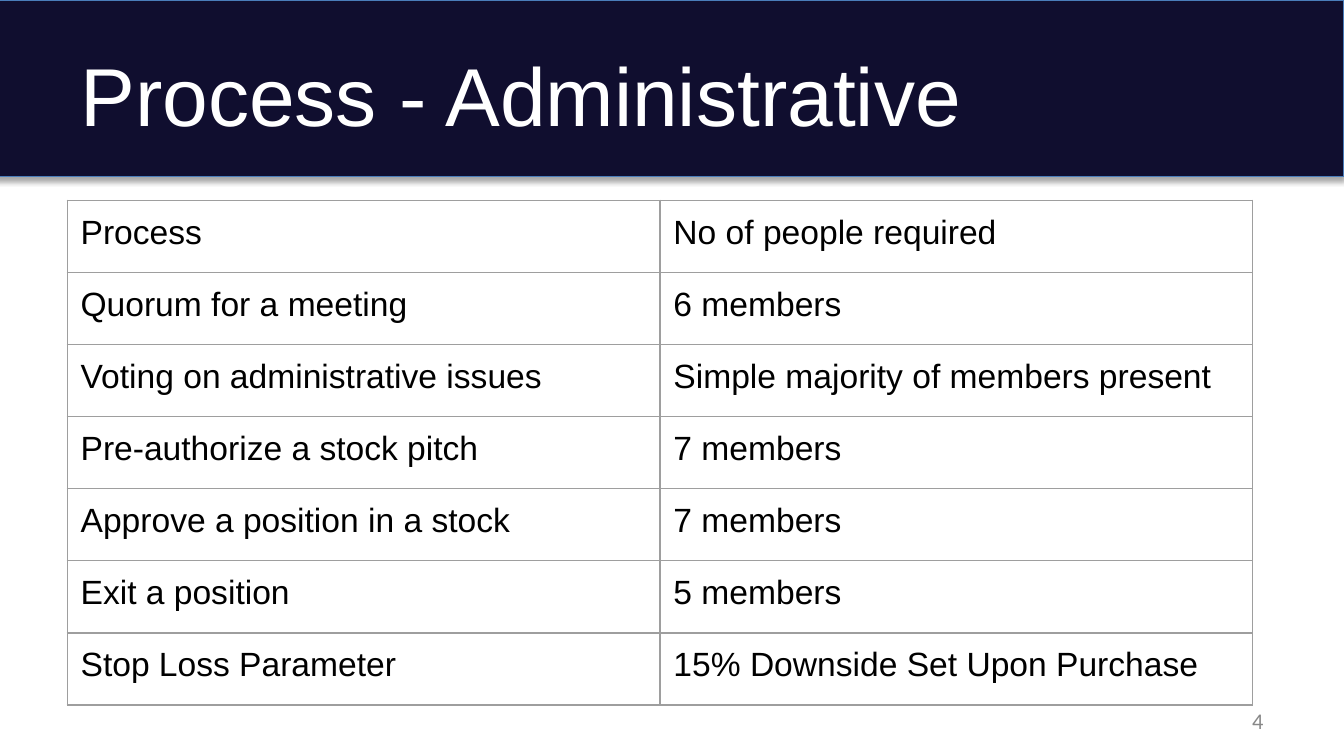
from lxml.etree import SubElement
from pptx import Presentation
from pptx.dml.color import RGBColor
from pptx.enum.shapes import MSO_SHAPE
from pptx.enum.text import MSO_ANCHOR, PP_ALIGN
from pptx.oxml.ns import qn
from pptx.util import Pt

NAVY, BLUE, WHITE, BLACK = "100E2F", "4A7DBA", "FFFFFF", "000000"
BORDER_GRAY, NUMBER_GRAY = "9E9E9E", "888888"

PROCESS_ROWS = [
    ("Process", "No of people required"),
    ("Quorum for a meeting", "6 members"),
    ("Voting on administrative issues", "Simple majority of members present"),
    ("Pre-authorize a stock pitch", "7 members"),
    ("Approve a position in a stock", "7 members"),
    ("Exit a position", "5 members"),
    ("Stop Loss Parameter", "15% Downside Set Upon Purchase"),
]
COLUMN_WIDTH, ROW_HEIGHT = 317.6, 38.65
CELL_MARGIN = 7.2


def color(hex_value):
    return RGBColor.from_string(hex_value)


def write_text(text_frame, text, size=18, font="Arial", fill=BLACK, align=PP_ALIGN.LEFT):
    paragraph = text_frame.paragraphs[0]
    paragraph.alignment = align
    run = paragraph.add_run()
    run.text = text
    run.font.size = Pt(size)
    run.font.name = font
    run.font.color.rgb = color(fill)


def add_text_box(slide, left, top, width, height, text, **text_format):
    box = slide.shapes.add_textbox(Pt(left), Pt(top), Pt(width), Pt(height))
    box.text_frame.word_wrap = True
    box.text_frame.vertical_anchor = MSO_ANCHOR.MIDDLE
    write_text(box.text_frame, text, **text_format)


def add_shadow(shape, blur, distance, opacity):
    shape.shadow.inherit = False
    effects = shape._element.spPr.find(qn("a:effectLst"))
    shadow = SubElement(effects, qn("a:outerShdw"), blurRad=str(Pt(blur)),
                        dist=str(Pt(distance)), dir="5400000", rotWithShape="0")
    shade = SubElement(shadow, qn("a:srgbClr"), val=BLACK)
    SubElement(shade, qn("a:alpha"), val=str(opacity * 1000))


def add_banner(slide):
    banner = slide.shapes.add_shape(MSO_SHAPE.RECTANGLE, Pt(-2.9), Pt(0), Pt(722.9), Pt(94.5))
    banner.fill.solid()
    banner.fill.fore_color.rgb = color(NAVY)
    banner.line.color.rgb = color(BLUE)
    banner.line.width = Pt(0.75)
    add_shadow(banner, blur=3.1, distance=1.8, opacity=35)


def set_borders(cell, hex_value, width):
    properties = cell._tc.get_or_add_tcPr()
    # Border lines come before the fill in the cell properties
    for position, side in enumerate(("lnL", "lnR", "lnT", "lnB")):
        line = SubElement(properties, qn(f"a:{side}"), w=str(Pt(width)))
        SubElement(SubElement(line, qn("a:solidFill")), qn("a:srgbClr"), val=hex_value)
        properties.insert(position, line)


def add_process_table(slide, left, top):
    row_count, column_count = len(PROCESS_ROWS), len(PROCESS_ROWS[0])
    frame = slide.shapes.add_table(row_count, column_count, Pt(left), Pt(top),
                                   Pt(COLUMN_WIDTH * column_count), Pt(ROW_HEIGHT * row_count))
    table = frame.table
    table.first_row = table.horz_banding = False
    for column in table.columns:
        column.width = Pt(COLUMN_WIDTH)
    for row, texts in zip(table.rows, PROCESS_ROWS):
        row.height = Pt(ROW_HEIGHT)
        for cell, text in zip(row.cells, texts):
            cell.margin_left = cell.margin_right = Pt(CELL_MARGIN)
            cell.margin_top = cell.margin_bottom = Pt(CELL_MARGIN)
            cell.fill.background()
            set_borders(cell, BORDER_GRAY, 0.75)
            write_text(cell.text_frame, text)


def main():
    presentation = Presentation()
    presentation.slide_width, presentation.slide_height = Pt(720), Pt(405)
    slide = presentation.slides.add_slide(presentation.slide_layouts[6])

    # Title band
    add_banner(slide)
    add_text_box(slide, 36, 16.5, 648, 67.5, "Process - Administrative", size=44, fill=WHITE)

    # Process requirements
    add_process_table(slide, 36, 107.3)

    # Slide number
    add_text_box(slide, 516, 375.4, 168, 21.6, "4", size=12, font="Calibri",
                 fill=NUMBER_GRAY, align=PP_ALIGN.RIGHT)

    presentation.save("out.pptx")


if __name__ == "__main__":
    main()
